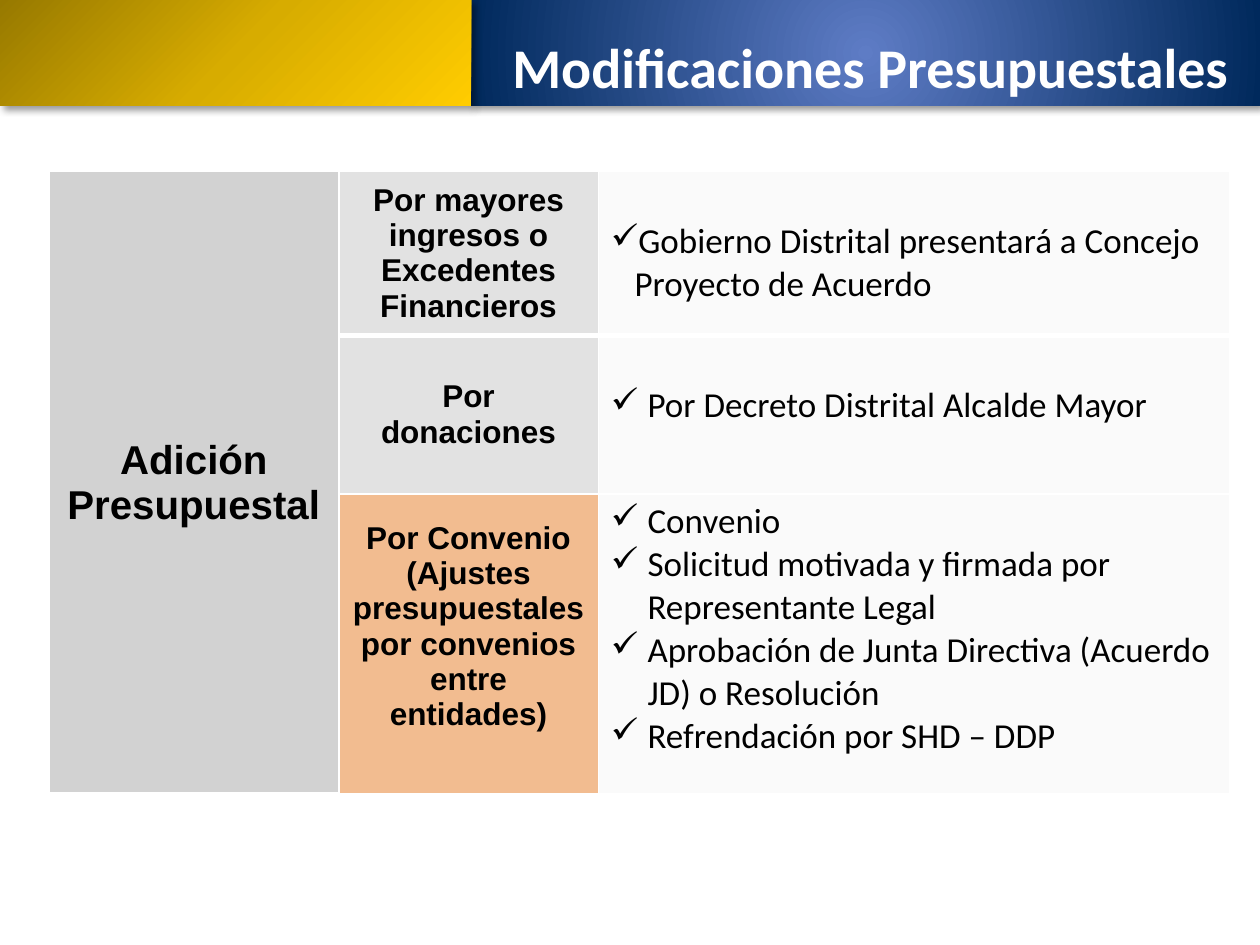
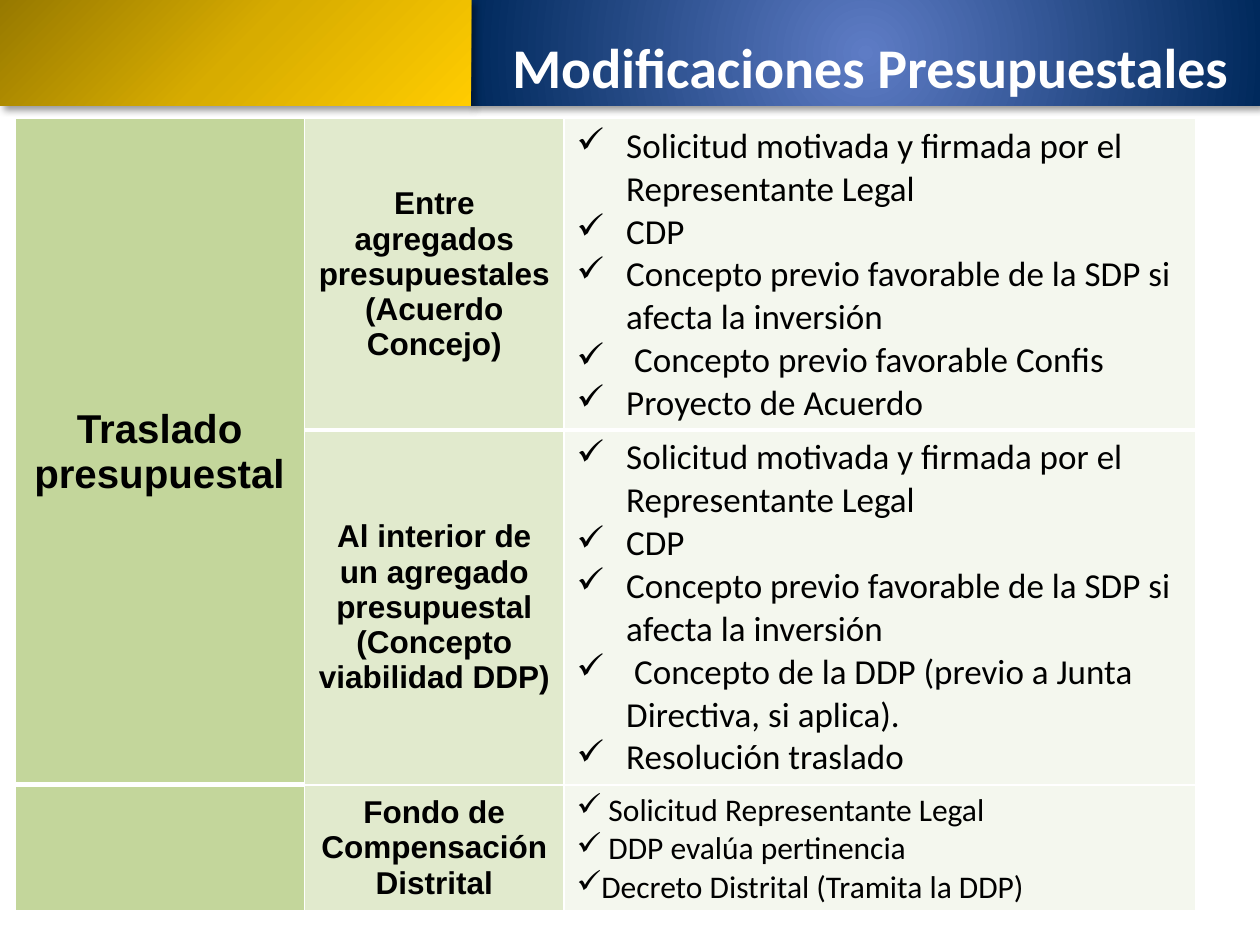
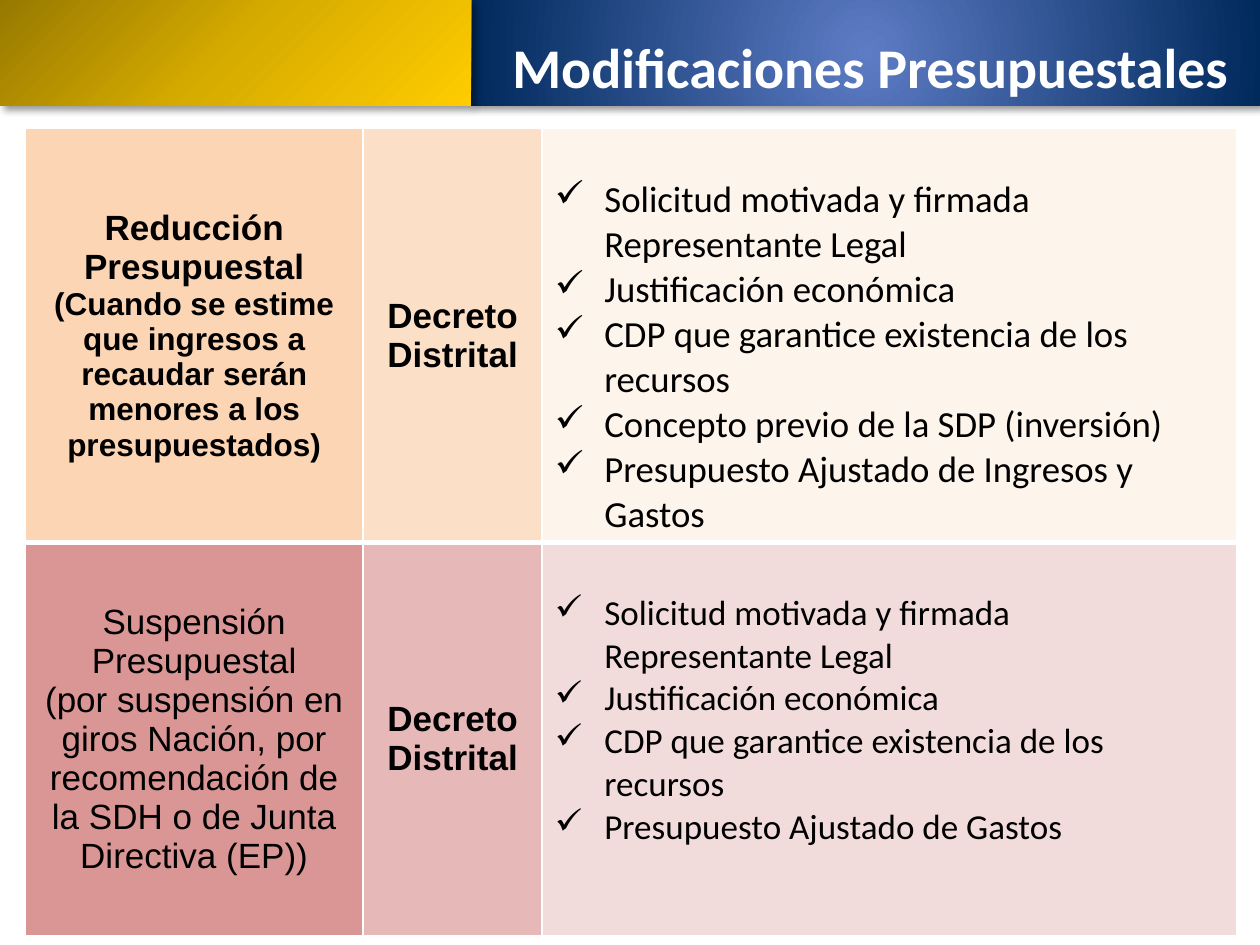
import dataclasses

import pptx
import pptx.dml.color
import pptx.enum.shapes
import pptx.enum.text
import pptx.oxml
import pptx.oxml.ns
import pptx.util
from pptx.util import Cm, Pt

BLACK, WHITE = "000000", "FFFFFF"
GRAY, PALE_GRAY, ORANGE = "BFBFBF", "F2F2F2", "E46C0A"
GREEN, LIGHT_GREEN, PALE_GREEN = "C3D69B", "D7E4BD", "EBF1DE"
PEACH, PALE_PEACH = "FCD5B5", "FDEADA"
RED, LIGHT_RED, PALE_RED = "D99694", "E6B9B8", "F2DCDB"
BLUE_STOPS = [(0, "5E7CC5"), (100, "00295C")]
GOLD_STOPS = [(0, "977900"), (50, "D7AC00"), (100, "FFCC00")]
TITLE = "Modificaciones Presupuestales"
NAMESPACE = pptx.oxml.ns.nsdecls("a")
ONE_LINE_LOWER = 0.99


@dataclasses.dataclass
class Entry:
    lines: list
    fill: str
    opacity: int = 100
    size: int = 18
    later_size: int = 0
    bold: bool = True
    checked: bool = False
    indent: float = 0
    top: float = 0.13
    bottom: float = 0.13


def checklist(lines, fill, opacity=100, size=20, indent=1.0, top=0.13):
    return Entry(lines, fill, opacity, size, bold=False, checked=True, indent=indent, top=top)


def rgb(value):
    return pptx.dml.color.RGBColor.from_string(value)


def set_font(para, name, size, color, bold):
    para.font.name = name
    para.font.size = Pt(size)
    para.font.bold = bold
    para.font.color.rgb = rgb(color)


def add_band(page, left, width, height, stops, focus):
    band = page.shapes.add_shape(
        pptx.enum.shapes.MSO_SHAPE.RECTANGLE, Cm(left), 0, Cm(width), Cm(height))
    band.line.fill.background()
    band.shadow.inherit = False
    properties = band._element.spPr
    stop_xml = "".join(
        f'<a:gs pos="{position * 1000}"><a:srgbClr val="{color}"/></a:gs>'
        for position, color in stops)
    sides = " ".join(f'{side}="{value * 1000}"' for side, value in zip("ltrb", focus))
    gradient = pptx.oxml.parse_xml(
        f'<a:gradFill {NAMESPACE} rotWithShape="1"><a:gsLst>{stop_xml}</a:gsLst>'
        f'<a:path path="circle"><a:fillToRect {sides}/></a:path></a:gradFill>')
    properties.insert(2, gradient)
    effects = properties.find(pptx.oxml.ns.qn("a:effectLst"))
    effects.append(pptx.oxml.parse_xml(
        f'<a:outerShdw {NAMESPACE} blurRad="{Pt(4)}" dist="{Pt(3)}" dir="2700000" '
        'algn="tl" rotWithShape="0"><a:srgbClr val="000000">'
        '<a:alpha val="40000"/></a:srgbClr></a:outerShdw>'))


def add_header(page, split=9.5, width=25.4, height=2.13):
    add_band(page, split, width - split, height, BLUE_STOPS, (50, 50, 50, 50))
    add_band(page, 0, split, height, GOLD_STOPS, (0, 0, 100, 100))
    box = page.shapes.add_textbox(Cm(split + 0.2), Cm(0.53), Cm(width - split - 0.2), Cm(1.4))
    box.text_frame.word_wrap = True
    para = box.text_frame.paragraphs[0]
    para.text = TITLE
    para.alignment = pptx.enum.text.PP_ALIGN.CENTER
    set_font(para, "Calibri", 32, WHITE, True)


def add_borders(properties, bottom_width):
    for position, side in enumerate("LRTB"):
        width = bottom_width if side == "B" else 1
        properties.insert(position, pptx.oxml.parse_xml(
            f'<a:ln{side} {NAMESPACE} w="{Pt(width)}"><a:solidFill>'
            f'<a:srgbClr val="{WHITE}"/></a:solidFill></a:ln{side}>'))


def add_check(para, indent):
    properties = para._p.get_or_add_pPr()
    properties.set("marL", str(Cm(indent)))
    properties.set("indent", str(-Cm(indent)))
    properties.append(pptx.oxml.parse_xml(f'<a:buChar {NAMESPACE} char="✓"/>'))


def fill_cell(cell, entry, bottom_width):
    cell.fill.solid()
    cell.fill.fore_color.rgb = rgb(entry.fill)
    properties = cell._tc.get_or_add_tcPr()
    if entry.opacity < 100:
        color = properties.find("a:solidFill/a:srgbClr", properties.nsmap)
        color.append(pptx.oxml.parse_xml(
            f'<a:alpha {NAMESPACE} val="{entry.opacity * 1000}"/>'))
    add_borders(properties, bottom_width)
    cell.margin_top, cell.margin_bottom = Cm(entry.top), Cm(entry.bottom)
    if not entry.checked:
        cell.vertical_anchor = pptx.enum.text.MSO_ANCHOR.MIDDLE
    frame = cell.text_frame
    for number, line in enumerate(entry.lines):
        para = frame.add_paragraph() if number else frame.paragraphs[0]
        para.text = line
        if entry.checked:
            add_check(para, entry.indent)
        else:
            para.alignment = pptx.enum.text.PP_ALIGN.CENTER
        size = entry.later_size if number and entry.later_size else entry.size
        set_font(para, "Calibri" if entry.checked else "Arial", size, BLACK, entry.bold)


def add_budget_table(page, left, top, widths, heights, rows):
    table = page.shapes.add_table(
        len(heights), len(widths), Cm(left), Cm(top),
        Cm(sum(widths)), Cm(sum(heights))).table
    table.first_row = table.horz_banding = False
    for column, width in zip(table.columns, widths):
        column.width = Cm(width)
    for row, height in zip(table.rows, heights):
        row.height = Cm(height)
    for row_number, entries in enumerate(rows):
        for column_number, entry in enumerate(entries):
            cell = table.cell(row_number, column_number)
            if entry:
                fill_cell(cell, entry, 1 if row_number else 3)
            elif not (row_number + 1 < len(rows) and rows[row_number + 1][column_number] is None):
                first = max(n for n in range(row_number) if rows[n][column_number])
                table.cell(first, column_number).merge(cell)


def add_budget_page(deck, *table_parts):
    page = deck.slides.add_slide(deck.slide_layouts[6])
    add_header(page)
    add_budget_table(page, *table_parts)


def main():
    deck = pptx.Presentation()
    deck.slide_width, deck.slide_height = Cm(25.4), Cm(19.05)
    wide_columns = (5.84, 5.23, 12.73)
    request = "Solicitud motivada y firmada por el Representante Legal"
    planning = "Concepto previo favorable de la SDP si afecta la inversión"
    support = [
        "Solicitud motivada y firmada Representante Legal",
        "Justificación económica",
        "CDP que garantice existencia de los recursos",
    ]

    additions = [
        [Entry(["Adición Presupuestal"], GRAY, 69, 23),
         Entry(["Por mayores ingresos o Excedentes Financieros"], GRAY, 45),
         checklist(["Gobierno Distrital presentará a Concejo Proyecto de Acuerdo"],
                   PALE_GRAY, 36, indent=0.48, top=ONE_LINE_LOWER)],
        [None,
         Entry(["Por donaciones"], GRAY, 45),
         checklist(["Por Decreto Distrital Alcalde Mayor"],
                   PALE_GRAY, 36, indent=0.74, top=ONE_LINE_LOWER)],
        [None,
         Entry(["Por Convenio", "(Ajustes presupuestales por convenios entre entidades)"],
               ORANGE, 45, bottom=0.84),
         checklist(["Convenio",
                    "Solicitud motivada y firmada por Representante Legal",
                    "Aprobación de Junta Directiva (Acuerdo JD) o Resolución",
                    "Refrendación por SHD – DDP"], PALE_GRAY, 36, indent=0.74)],
    ]
    add_budget_page(deck, 0.99, 3.45, wide_columns, (3.3, 3.2, 6.05), additions)

    transfers = [
        [Entry(["Traslado presupuestal"], GREEN, size=23),
         Entry(["Entre agregados presupuestales", "(Acuerdo Concejo)"], LIGHT_GREEN, 75),
         checklist([request, "CDP", planning, " Concepto previo favorable Confis",
                    "Proyecto de Acuerdo"], PALE_GREEN, 50)],
        [None,
         Entry(["Al interior de un agregado presupuestal", "(Concepto viabilidad DDP)"],
               LIGHT_GREEN, 75),
         checklist([request, "CDP", planning,
                    " Concepto de la DDP (previo a Junta Directiva, si aplica).",
                    "Resolución traslado"], PALE_GREEN, 50)],
        [Entry([], GREEN),
         Entry(["Fondo de Compensación Distrital"], LIGHT_GREEN, 75),
         checklist([" Solicitud Representante Legal", " DDP evalúa pertinencia",
                    "Decreto Distrital (Tramita la DDP)"], PALE_GREEN, 50, 18, 0)],
    ]
    add_budget_page(deck, 0.3, 2.39, wide_columns, (6.28, 7.15, 2.55), transfers)

    cutbacks = [
        [Entry(["Reducción Presupuestal",
                "(Cuando se estime que ingresos a recaudar serán menores a los presupuestados)"],
               PEACH, size=20, later_size=18),
         Entry(["Decreto", "Distrital"], PEACH, 75, 20),
         checklist(support + ["Concepto previo de la SDP (inversión)",
                              "Presupuesto Ajustado de Ingresos y Gastos"],
                   PALE_PEACH, 50, 21, top=ONE_LINE_LOWER)],
        [Entry(["Suspensión Presupuestal",
                "(por suspensión en giros Nación, por recomendación de la SDH "
                "o de Junta Directiva (EP))"], RED, size=20, bold=False),
         Entry(["Decreto Distrital"], LIGHT_RED, size=20),
         checklist(support + ["Presupuesto Ajustado de Gastos"],
                   PALE_RED, top=ONE_LINE_LOWER)],
    ]
    add_budget_page(deck, 0.51, 2.59, (6.81, 3.61, 14), (8.35, 7.92), cutbacks)
    deck.save("out.pptx")


if __name__ == "__main__":
    main()
